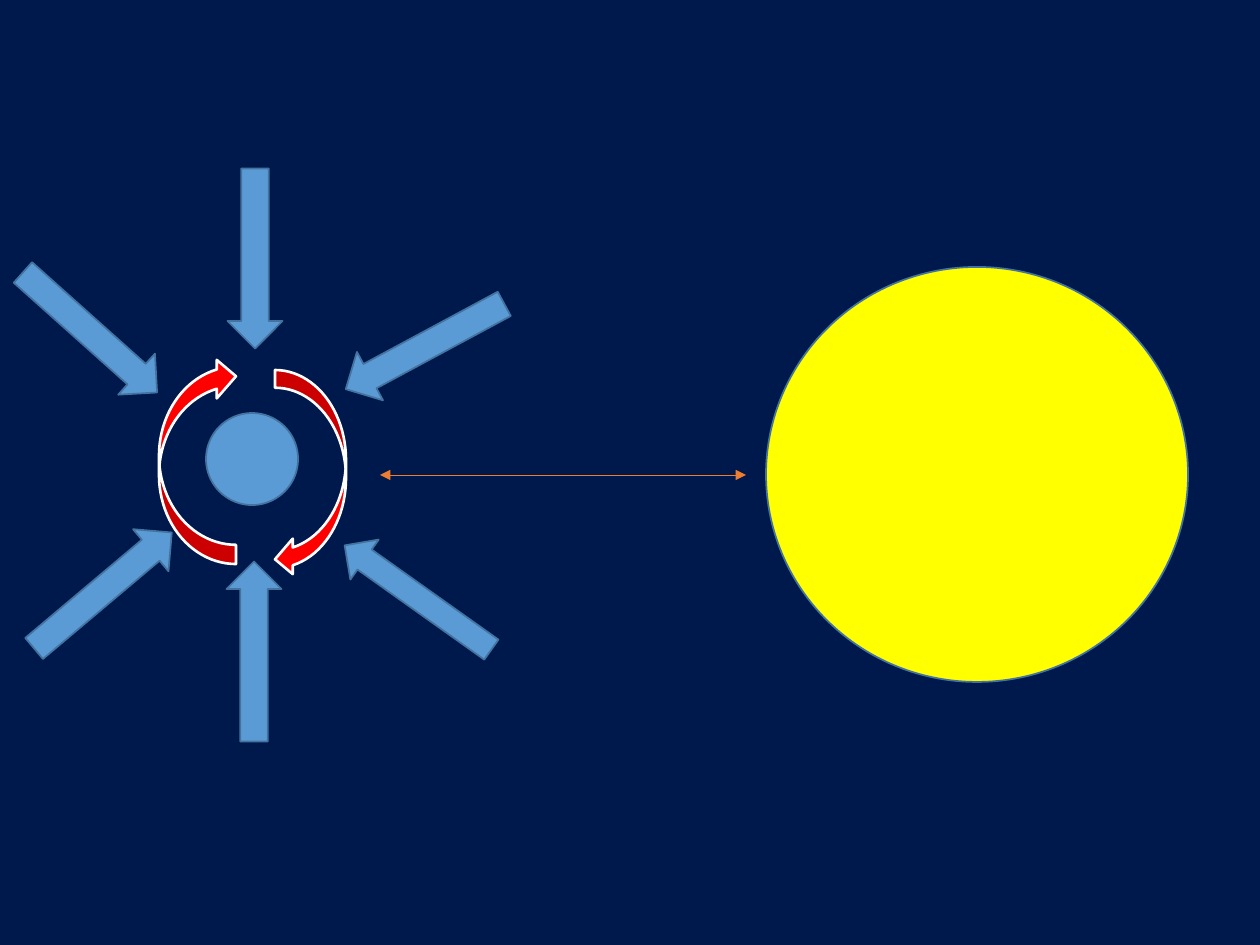
from lxml.etree import SubElement
from pptx import Presentation
from pptx.dml.color import RGBColor
from pptx.enum.shapes import MSO_CONNECTOR as Connector, MSO_SHAPE as Shape
from pptx.oxml.ns import qn
from pptx.util import Pt

PX = 914400 / 126  # EMU per px

NIGHT = RGBColor(0x00, 0x19, 0x4C)
YELLOW = RGBColor(0xFF, 0xFF, 0x00)
BLUE = RGBColor(0x5B, 0x9B, 0xD5)
DARK_BLUE = RGBColor(0x43, 0x73, 0x9E)
ORANGE = RGBColor(0xED, 0x7D, 0x31)
RED = RGBColor(0xFF, 0x00, 0x00)
WHITE = RGBColor(0xFF, 0xFF, 0xFF)

ARROW_LENGTH = 180
ARROW_WIDTH = 55


def emu(*lengths):
    return [round(length * PX) for length in lengths]


class Diagram:
    def __init__(self, slide):
        self.slide = slide
        slide.background.fill.solid()
        slide.background.fill.fore_color.rgb = NIGHT

    def figure(self, kind, box, fill, line=DARK_BLUE, weight=1, angle=0):
        figure = self.slide.shapes.add_shape(kind, *emu(*box))
        figure.shadow.inherit = False
        figure.fill.solid()
        figure.fill.fore_color.rgb = fill
        figure.line.color.rgb = line
        figure.line.width = Pt(weight)
        figure.rotation = angle

    def pressure(self, left, top, angle, width=ARROW_WIDTH):
        self.figure(Shape.RIGHT_ARROW, (left, top, ARROW_LENGTH, width),
                    BLUE, angle=angle)

    def spin(self, box, angle=0):
        self.figure(Shape.CURVED_LEFT_ARROW, box, RED, WHITE, 1.5, angle)

    def distance(self, start_x, end_x, y):
        distance = self.slide.shapes.add_connector(
            Connector.STRAIGHT, *emu(start_x, y, end_x, y))
        distance.line.color.rgb = ORANGE
        distance.line.width = Pt(0.5)
        outline = distance.line._get_or_add_ln()
        for end in ("a:headEnd", "a:tailEnd"):
            SubElement(outline, qn(end), type="triangle")
        SubElement(distance._element.spPr, qn("a:effectLst"))


def main():
    deck = Presentation()
    deck.slide_width, deck.slide_height = emu(1260, 945)
    diagram = Diagram(deck.slides.add_slide(deck.slide_layouts[6]))

    # Sun, planet and the distance between them
    diagram.figure(Shape.OVAL, (766, 267, 422, 415), YELLOW)
    diagram.figure(Shape.OVAL, (206, 413, 92, 92), BLUE)
    diagram.distance(380, 746, 475)

    # Rotation around the planet
    diagram.spin((275, 370, 71, 207))
    diagram.spin((159, 357, 77, 207), angle=180)

    # Arrows pointing inwards to the planet
    for left, top, angle in ((165, 231, 90), (335, 319, 151.7),
                             (0, 305, 41.8), (164, 624, 270)):
        diagram.pressure(left, top, angle)
    diagram.pressure(328, 573, 215.4, width=49)
    diagram.pressure(13, 563, 319.9)

    deck.save("out.pptx")


if __name__ == "__main__":
    main()
